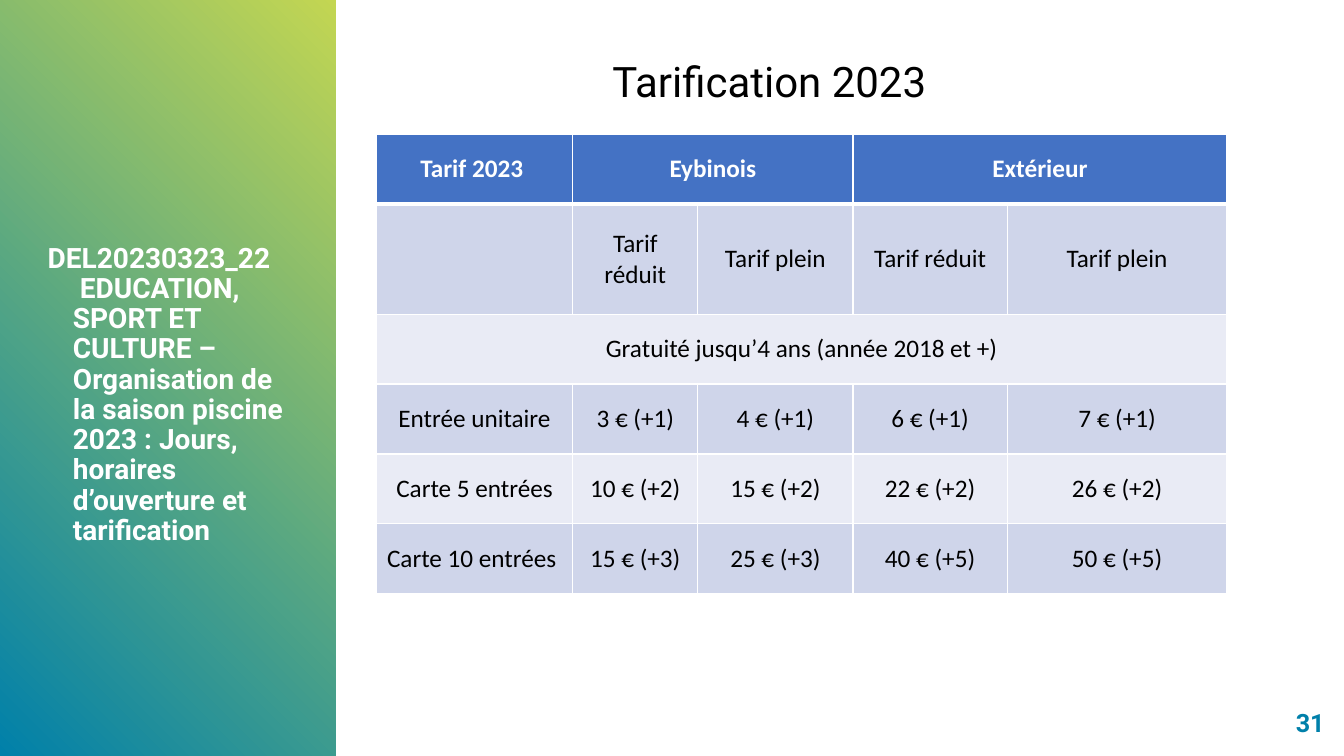
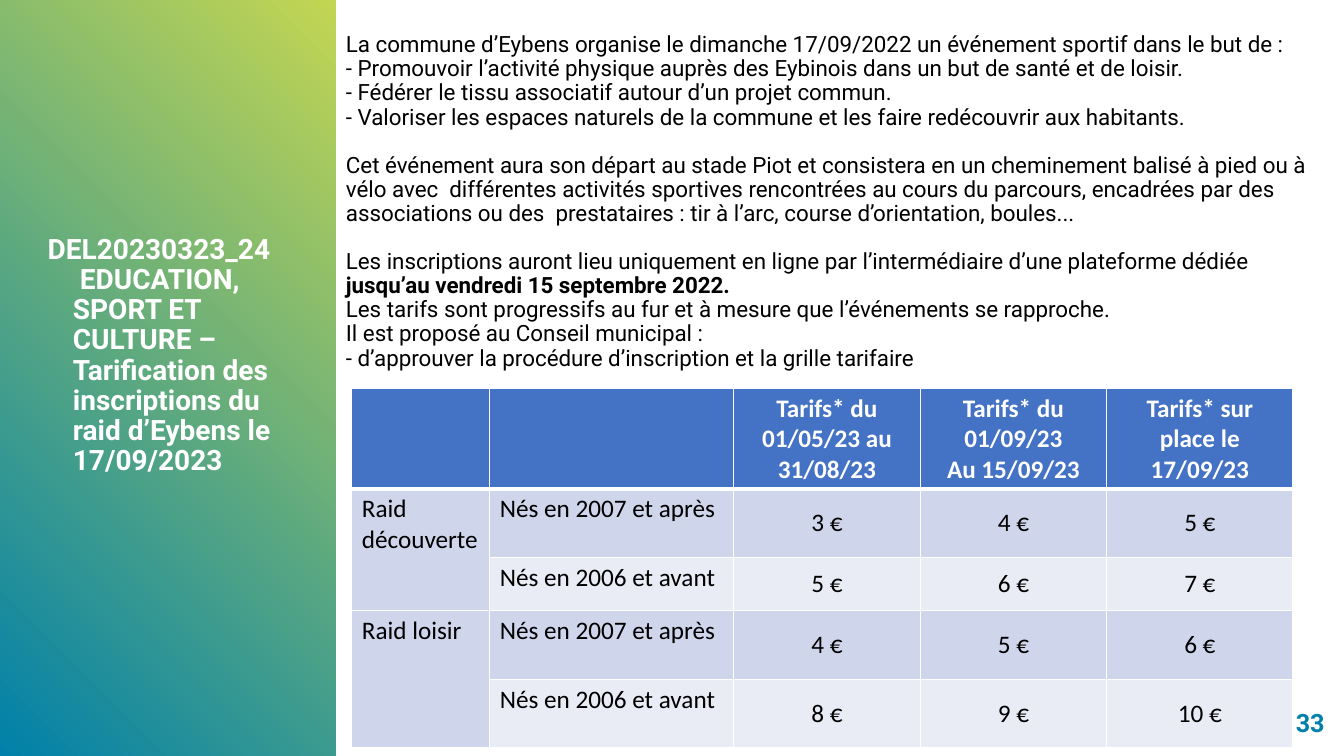
from lxml import etree
from pptx import Presentation
from pptx.dml.color import RGBColor
from pptx.enum.shapes import MSO_SHAPE
from pptx.enum.text import MSO_ANCHOR, MSO_AUTO_SIZE, PP_ALIGN
from pptx.oxml.ns import qn
from pptx.util import Inches, Pt

RECT = MSO_SHAPE.RECTANGLE
TOP, MIDDLE = MSO_ANCHOR.TOP, MSO_ANCHOR.MIDDLE
LEFT, CENTER, RIGHT = PP_ALIGN.LEFT, PP_ALIGN.CENTER, PP_ALIGN.RIGHT
NO_FIT = MSO_AUTO_SIZE.NONE

COLS, ROWS = 40, 22.5
SIDEBAR_COLS = 10
TITLE_ONLY = 5
HEAD_FONT, TABLE_FONT = "Roboto", "Calibri"
BLUE, LIME = "0080AA", "C3D652"
WHITE, BLACK = "FFFFFF", "000000"
HEADER, BAND_DARK, BAND_LIGHT = "4472C4", "CFD5EA", "E9EBF5"

PRICES = [
    ["Tarif 2023 ", "Eybinois", "", "Extérieur", ""],
    ["", "Tarif réduit", "Tarif plein", "Tarif réduit", "Tarif plein"],
    ["Gratuité jusqu’4 ans (année 2018 et +)", "", "", "", ""],
    ["Entrée unitaire", "3 € (+1)", "4 € (+1)", "6 € (+1)", "7 € (+1)"],
    ["Carte 5 entrées", "10 € (+2)", "15 € (+2)", "22 € (+2)", "26 € (+2)"],
    ["Carte 10 entrées ", "15 € (+3)", "25 € (+3)", "40 € (+5)", "50 € (+5)"],
]
YOUNG, ADULT = "Nés en 2007 et après", "Nés en 2006 et avant"
RAID = [
    ["", "", "Tarifs* du 01/05/23 au 31/08/23",
     "Tarifs* du 01/09/23\nAu 15/09/23", "Tarifs* sur place le 17/09/23"],
    ["Raid découverte", YOUNG, "3 €", "4 €", "5 €"],
    ["", ADULT, "5 €", "6 €", "7 €"],
    ["Raid loisir", YOUNG, "4 €", "5 €", "6 €"],
    ["", ADULT, "8 €", "9 €", "10 €"],
]
EVENT = [
    [
        ["La commune d’Eybens organise le dimanche 17/09/2022 un événement sportif dans le but de :"],
        ["- Promouvoir l’activité physique auprès des Eybinois dans un but de santé et de loisir."],
        ["- Fédérer le tissu associatif autour d’un projet commun."],
        ["- Valoriser les espaces naturels de la commune et les faire redécouvrir aux habitants."],
    ],
    [
        ["Cet événement aura son départ au stade Piot et consistera en un cheminement balisé "
         "à pied ou à vélo avec  différentes activités sportives rencontrées au cours du "
         "parcours, encadrées par des associations ou des  prestataires : tir à l’arc, "
         "course d’orientation, boules..."],
    ],
    [
        ["Les inscriptions auront lieu uniquement en ligne par l’intermédiaire d’une "
         "plateforme dédiée ", "jusqu’au vendredi 15 septembre 2022."],
        ["Les tarifs sont progressifs au fur et à mesure que l’événements se rapproche."],
        ["Il est proposé au Conseil municipal :"],
        ["- d’approuver la procédure d’inscription et la grille tarifaire"],
    ],
]


def rgb(color):
    return RGBColor.from_string(color)


def unit(n):
    return Inches(n * 13.333 / COLS)


def place(sp, box):
    sp.left, sp.top, sp.width, sp.height = map(unit, box)


def add_run(p, text, size, color, font=HEAD_FONT, bold=False):
    r = p.add_run()
    r.text = text
    r.font.name, r.font.size, r.font.bold = font, Pt(size), bold
    r.font.color.rgb = rgb(color)


def add_text(s, box):
    tf = s.shapes.add_textbox(*map(unit, box)).text_frame
    tf.word_wrap, tf.vertical_anchor = True, MIDDLE
    return tf


def add_line(s, box, text, size, color, align, bold=False):
    p = add_text(s, box).paragraphs[0]
    p.alignment, p.line_spacing = align, 0.9
    add_run(p, text, size, color, bold=bold)


def add_sidebar(s):
    sp = s.shapes.add_shape(RECT, 0, 0, unit(SIDEBAR_COLS), unit(ROWS))
    sp.shadow.inherit = False
    sp.line.fill.background()
    sp.fill.gradient()
    sp.fill.gradient_angle = 45
    for stop, color, position in zip(sp.fill.gradient_stops, (BLUE, LIME), (0, 1)):
        stop.color.rgb, stop.position = rgb(color), position
    s.shapes.title._element.addprevious(sp._element)


def set_title(s, top, number, subject):
    title = s.shapes.title
    place(title, (1.12, top, 8.04, 14))
    tf = title.text_frame
    tf.word_wrap, tf.auto_size, tf.vertical_anchor = True, NO_FIT, TOP
    p = tf.paragraphs[0]
    p.alignment, p.line_spacing = LEFT, 0.9
    pPr = p._p.get_or_add_pPr()
    pPr.set("marL", str(Inches(0.25)))
    pPr.set("indent", str(-Inches(0.25)))
    add_run(p, number, 20, WHITE, bold=True)
    p.add_line_break()
    add_run(p, subject, 20, WHITE, bold=True)


def add_slide(prs, page, title_top, number, subject):
    s = prs.slides.add_slide(prs.slide_layouts[TITLE_ONLY])
    set_title(s, title_top, number, subject)
    add_sidebar(s)
    add_line(s, (28.56, 20.94, 11.16, 1.23), page, 18, BLUE, RIGHT, bold=True)
    return s


def add_border(cell, side, width):
    ln = etree.SubElement(cell._tc.get_or_add_tcPr(), qn("a:" + side), w=str(Pt(width)))
    fill = etree.SubElement(ln, qn("a:solidFill"))
    etree.SubElement(fill, qn("a:srgbClr"), val=WHITE)


def format_cell(cell, text, row, left):
    header = row == 0
    for side in ("lnL", "lnR", "lnT", "lnB"):
        thick = (header and side == "lnB") or (row == 1 and side == "lnT")
        add_border(cell, side, 3 if thick else 1)
    cell.fill.solid()
    cell.fill.fore_color.rgb = rgb(HEADER if header else BAND_DARK if row % 2 else BAND_LIGHT)
    cell.vertical_anchor = TOP if left else MIDDLE
    if not text:
        return
    tf = cell.text_frame
    for i, line in enumerate(text.split("\n")):
        p = tf.add_paragraph() if i else tf.paragraphs[0]
        p.alignment = LEFT if left else CENTER
        add_run(p, line, 18, WHITE if header else BLACK, TABLE_FONT, header)


def add_table(s, left, top, widths, heights, data, spans, left_cols=0, inset=None):
    box = (left, top, sum(widths), sum(heights))
    tbl = s.shapes.add_table(len(heights), len(widths), *map(unit, box)).table
    for col, width in zip(tbl.columns, widths):
        col.width = unit(width)
    for row, height in zip(tbl.rows, heights):
        row.height = unit(height)
    for r, texts in enumerate(data):
        for c, text in enumerate(texts):
            cell = tbl.cell(r, c)
            if inset:
                cell.margin_left = cell.margin_right = Inches(inset)
                cell.margin_top = cell.margin_bottom = Inches(inset)
            format_cell(cell, text, r, c < left_cols)
    for start, end in spans:
        tbl.cell(*start).merge(tbl.cell(*end))


def add_body(s, box, groups):
    tf = add_text(s, box)
    for g, group in enumerate(groups):
        for i, (plain, *strong) in enumerate(group):
            p = tf.add_paragraph() if g or i else tf.paragraphs[0]
            p.line_spacing = 0.9
            if g and not i:
                p.space_before = Pt(17)
            add_run(p, plain, 16, BLACK)
            for text in strong:
                add_run(p, text, 16, BLACK, bold=True)


def main():
    prs = Presentation()
    prs.slide_width, prs.slide_height = unit(COLS), unit(ROWS)

    s = add_slide(prs, "31", 7.11, "DEL20230323_22",
                  " EDUCATION, SPORT ET CULTURE – Organisation de la saison piscine 2023 : "
                  "Jours, horaires  d’ouverture et tarification")
    add_line(s, (10.8, 1.6, 24.2, 1.8), "Tarification 2023", 30, BLACK, CENTER)
    add_table(s, 11.2, 4, [5.85, 3.72, 4.62, 4.59, 6.54], [2.08, 3.27] + [2.08] * 4, PRICES,
              [((0, 1), (0, 2)), ((0, 3), (0, 4)), ((2, 0), (2, 4))], inset=0.07)

    s = add_slide(prs, "33", 6.84, "DEL20230323_24",
                  " EDUCATION, SPORT ET CULTURE – Tarification des inscriptions du raid "
                  "d’Eybens le 17/09/2023")
    add_table(s, 10.47, 11.55, [4.11, 7.26] + [5.55] * 3, [3, 2.04, 1.59, 2.04, 2.04], RAID,
              [((1, 0), (2, 0)), ((3, 0), (4, 0))], left_cols=2)
    add_body(s, (SIDEBAR_COLS, 0.84, 29.64, 10.35), EVENT)

    prs.save("out.pptx")


if __name__ == "__main__":
    main()
